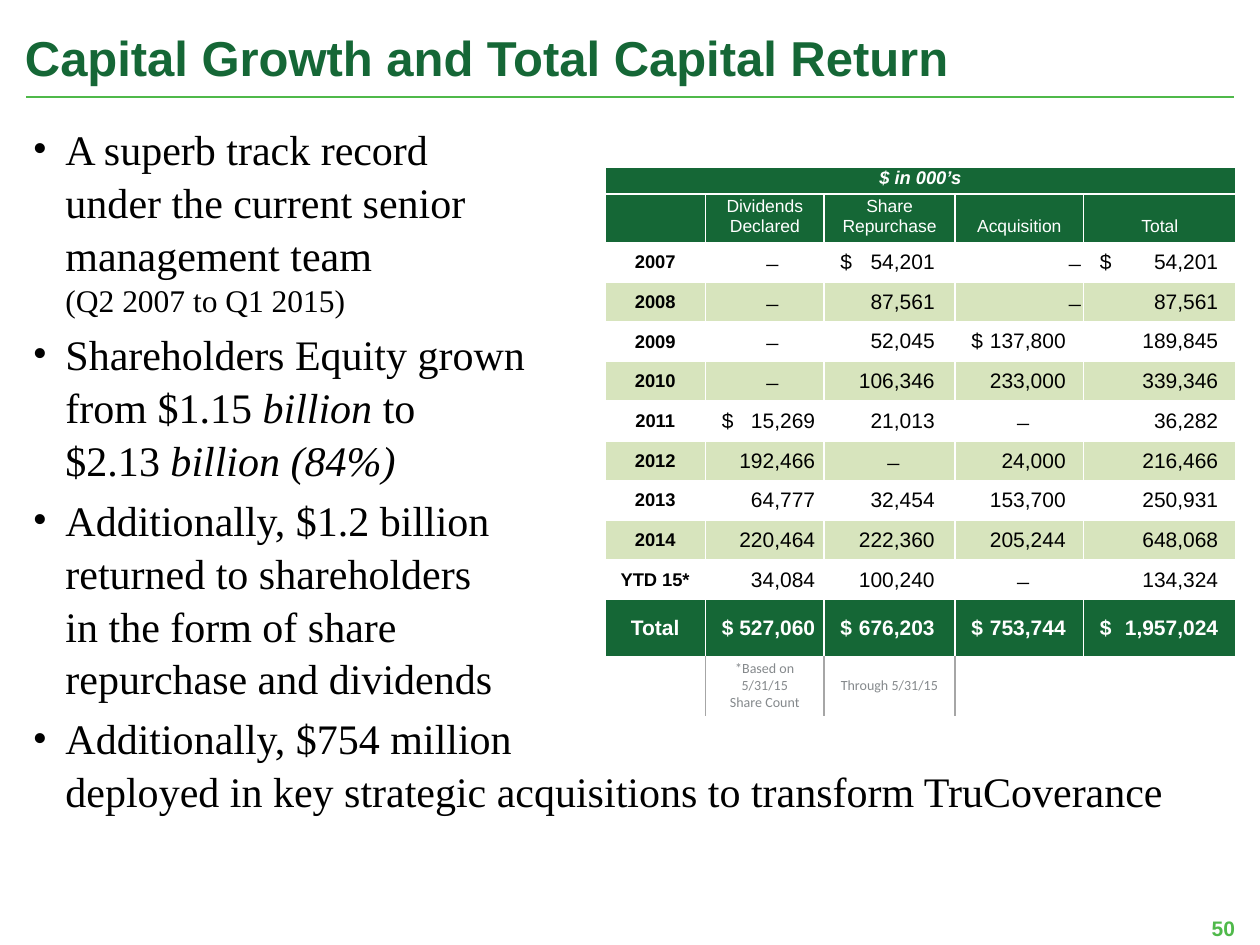
from lxml import etree
from pptx import Presentation
from pptx.dml.color import RGBColor
from pptx.enum import shapes, text
from pptx.oxml.ns import qn
from pptx.util import Inches, Pt

GREEN = RGBColor(0x15, 0x67, 0x36)
LIME = RGBColor(0x4F, 0xB9, 0x4A)
BAND = RGBColor(0xD7, 0xE4, 0xBD)
WHITE = RGBColor(0xFF, 0xFF, 0xFF)
BLACK = RGBColor(0, 0, 0)
RULE_GREY = RGBColor(0xA6, 0xA6, 0xA6)
NOTE_GREY = RGBColor(0x85, 0x89, 0x8C)

LEFT, CENTER, RIGHT = text.PP_ALIGN.LEFT, text.PP_ALIGN.CENTER, text.PP_ALIGN.RIGHT
TOP, MIDDLE, BOTTOM = text.MSO_ANCHOR.TOP, text.MSO_ANCHOR.MIDDLE, text.MSO_ANCHOR.BOTTOM

DASH = "̶"
COLUMN_WIDTHS = [0.8, 0.94, 1.04, 1.02, 1.21]
ROW_HEIGHTS = [0.21, 0.36] + [0.315] * 9 + [0.45, 0.47]
HEADINGS = ["", "Dividends\nDeclared", "Share\nRepurchase", "Acquisition", "Total"]
YEARS = [
    ("2007", DASH, "$54,201", DASH, "$54,201"),
    ("2008", DASH, "87,561", DASH, "87,561"),
    ("2009", DASH, "52,045", "$137,800", "189,845"),
    ("2010", DASH, "106,346", "233,000", "339,346"),
    ("2011", "$15,269", "21,013", DASH, "36,282"),
    ("2012", "192,466", DASH, "24,000", "216,466"),
    ("2013", "64,777", "32,454", "153,700", "250,931"),
    ("2014", "220,464", "222,360", "205,244", "648,068"),
    ("YTD 15*", "34,084", "100,240", DASH, "134,324"),
]
TOTALS = ("Total", "$527,060", "$676,203", "$753,744", "$1,957,024")
NOTES = ["", "*Based on 5/31/15\nShare Count", "Through 5/31/15", "", ""]
BULLETS = [
    [("A superb track record\nunder the current senior\nmanagement team\n", 24, False),
     ("(Q2 2007 to Q1 2015)", 18, False)],
    [("Shareholders Equity grown\nfrom $1.15 ", 24, False), ("billion ", 24, True),
     ("to\n$2.13 ", 24, False), ("billion (84%)", 24, True)],
    [("Additionally, $1.2 billion\nreturned to shareholders\n"
      "in the form of share\nrepurchase and dividends", 24, False)],
    [("Additionally, $754 million\ndeployed in key strategic acquisitions "
      "to transform TruCoverance", 24, False)],
]


def add_text(paragraph, words, size, color, font="Arial", bold=False, italic=False):
    """Add one run per line, with line breaks between them."""
    for index, line in enumerate(words.split("\n")):
        if index:
            paragraph.add_line_break()
        if not line:
            continue
        run = paragraph.add_run()
        run.text = line
        run.font.name, run.font.size = font, Pt(size)
        run.font.bold, run.font.italic = bold, italic
        run.font.color.rgb = color


def add_box(slide, left, top, width, height, anchor=TOP):
    frame = slide.shapes.add_textbox(
        Inches(left), Inches(top), Inches(width), Inches(height)).text_frame
    frame.word_wrap = True
    frame.vertical_anchor = anchor
    return frame


def add_heading(slide, left, top, width, height):
    frame = add_box(slide, left, top, width, height)
    add_text(frame.paragraphs[0], "Capital Growth and Total Capital Return", 28, GREEN, bold=True)
    line_top = Inches(top + 0.6)
    rule = slide.shapes.add_connector(
        shapes.MSO_CONNECTOR.STRAIGHT, Inches(left + 0.11), line_top,
        Inches(left + 9.69), line_top)
    rule.line.color.rgb = LIME
    rule.line.width = Pt(1.5)
    etree.SubElement(rule._element.spPr, qn("a:effectLst"))


def add_page_number(slide, left, top, width, height):
    paragraph = add_box(slide, left, top, width, height, MIDDLE).paragraphs[0]
    paragraph.alignment = RIGHT
    add_text(paragraph, "50", 12, LIME, bold=True)


def add_bullets(slide, left, top, width, height):
    frame = add_box(slide, left, top, width, height)
    frame.margin_left = frame.margin_right = Inches(0.05)
    for index, runs in enumerate(BULLETS):
        paragraph = frame.add_paragraph() if index else frame.paragraphs[0]
        paragraph.line_spacing = 1.05
        paragraph.space_after = Pt(4)
        properties = paragraph._p.get_or_add_pPr()
        properties.set("marL", str(Inches(0.26)))
        properties.set("indent", str(-Inches(0.26)))
        etree.SubElement(properties, qn("a:buFont"), typeface="Times New Roman")
        etree.SubElement(properties, qn("a:buChar"), char="•")
        for words, size, italic in runs:
            add_text(paragraph, words, size, BLACK, "Times New Roman", italic=italic)


def set_borders(cell, left=WHITE, right=WHITE):
    properties = cell._tc.get_or_add_tcPr()
    for side, color in (("L", left), ("R", right), ("T", WHITE), ("B", WHITE)):
        line = etree.SubElement(properties, qn(f"a:ln{side}"), w=str(Pt(1)))
        fill = etree.SubElement(line, qn("a:solidFill"))
        etree.SubElement(fill, qn("a:srgbClr"), val=str(color))


def fill_cell(cell, words, size, color, fill, align=CENTER, anchor=MIDDLE,
              sides=(WHITE, WHITE), tabs=(), **style):
    set_borders(cell, *sides)
    cell.fill.solid()
    cell.fill.fore_color.rgb = fill
    cell.vertical_anchor = anchor
    cell.margin_left = cell.margin_right = Inches(0.07)
    cell.margin_top = cell.margin_bottom = 0
    paragraph = cell.text_frame.paragraphs[0]
    paragraph.alignment = align
    if tabs:
        tab_list = etree.SubElement(paragraph._p.get_or_add_pPr(), qn("a:tabLst"))
        for position, kind in zip(tabs, ("l", "dec")):
            etree.SubElement(tab_list, qn("a:tab"), pos=str(Inches(position)), algn=kind)
    add_text(paragraph, words, size, color, **style)


def fill_amounts(table, row, record, color, fill, label_size, bold=False):
    """Fill a label and its amounts, lined up on a dollar tab and a decimal tab."""
    fill_cell(table.cell(row, 0), record[0], label_size, color, fill, bold=True)
    for column, amount in enumerate(record[1:], 1):
        tabs, align = (0.06, 1 if column == 4 else 0.81), LEFT
        words = "\t" + ("$" if amount.startswith("$") else "") + "\t" + amount.lstrip("$")
        if amount == DASH:
            words = "\t" + DASH
            align = RIGHT if column == 3 and row < 4 else CENTER
            if column == 1:
                tabs = (0.12, 1.12)
        fill_cell(table.cell(row, column), words, 12, color, fill, align,
                  tabs=tabs, bold=bold)


def add_capital_table(slide, left, top):
    table = slide.shapes.add_table(
        len(ROW_HEIGHTS), len(COLUMN_WIDTHS), Inches(left), Inches(top),
        Inches(sum(COLUMN_WIDTHS)), Inches(sum(ROW_HEIGHTS))).table
    table.first_row = table.horz_banding = False
    for column, width in zip(table.columns, COLUMN_WIDTHS):
        column.width = Inches(width)
    for row, height in zip(table.rows, ROW_HEIGHTS):
        row.height = Inches(height)

    table.cell(0, 0).merge(table.cell(0, 4))
    fill_cell(table.cell(0, 0), "$ in 000’s", 10.5, WHITE, GREEN, anchor=TOP,
              bold=True, italic=True)
    for column, heading in enumerate(HEADINGS):
        cell = table.cell(1, column)
        fill_cell(cell, heading, 10, WHITE, GREEN, anchor=BOTTOM)
        cell.margin_bottom = Inches(0.05)
    for row, record in enumerate(YEARS, 2):
        fill_amounts(table, row, record, BLACK, BAND if row % 2 else WHITE, 10.5)
    fill_amounts(table, 11, TOTALS, WHITE, GREEN, 12, bold=True)
    dividers = [WHITE, RULE_GREY, RULE_GREY, RULE_GREY, WHITE, WHITE]
    for column, note in enumerate(NOTES):
        fill_cell(table.cell(12, column), note, 8, NOTE_GREY, WHITE,
                  sides=dividers[column:column + 2], font="Calibri")


def main():
    presentation = Presentation()
    presentation.slide_width, presentation.slide_height = Inches(10), Inches(7.5)
    slide = presentation.slides.add_slide(presentation.slide_layouts[6])
    add_heading(slide, 0.1, 0.17, 9.67, 0.67)
    add_page_number(slide, 7.57, 7.17, 2.33, 0.4)
    add_bullets(slide, 0.21, 0.91, 9.58, 5.55)
    add_capital_table(slide, 4.8, 1.33)
    presentation.save("out.pptx")


if __name__ == "__main__":
    main()
